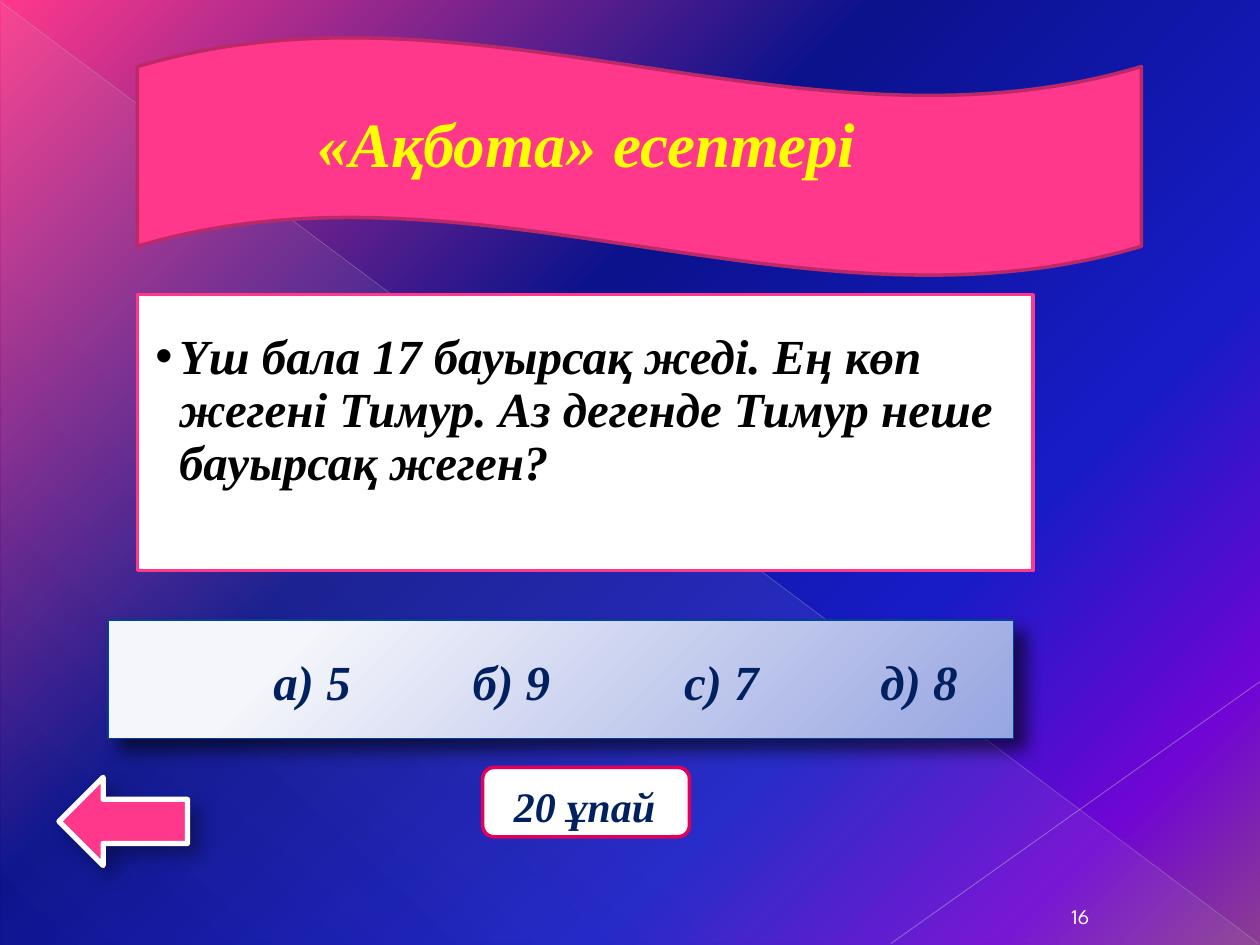
from lxml.etree import SubElement
from pptx import Presentation
from pptx.dml.color import RGBColor
from pptx.enum.shapes import MSO_CONNECTOR, MSO_SHAPE
from pptx.enum.text import MSO_ANCHOR, MSO_AUTO_SIZE, PP_ALIGN
from pptx.oxml.ns import qn
from pptx.util import Cm, Pt

# Content
TITLE = "«Ақбота» есептері"
QUESTION = ("Үш бала 17 бауырсақ жеді. Ең көп жегені Тимур. "
            "Аз дегенде Тимур неше бауырсақ жеген?")
ANSWERS = ["а) 5", "б) 9", "с) 7", "д) 8"]
POINTS = "20 ұпай"
PAGE_NUMBER = "16"

# Colours, fonts and type sizes
THEME = {
    "pink": "FF388C", "pink_edge": "BD2968", "badge_edge": "E40059",
    "white": "FFFFFF", "black": "000000", "navy": "002060",
    "yellow": "FFFF00", "title_edge": "002675", "answer_edge": "004299",
    "font": "Times New Roman", "number_font": "League Spartan",
    "title": 36, "body": 28, "points": 24, "number": 12,
    # Gradient stops: position, colour, opacity (percent)
    "background": [(0, "FF388C", 100), (40, "0A128C", 100), (70, "181CC7", 100),
                   (88, "7005D4", 100), (100, "8C3D91", 100)],
    "veil": [(0, "D2D2D2", 10), (70, "D2D2D2", 8), (100, "D2D2D2", 1)],
    "answers": [(20, "F5F6FB", 100), (100, "97A5E1", 100)],
}

# Places in cm: left, top, width, height
PLACES = {
    "veil": (0.03, 0.05, 25.37, 19),
    "badge": (9.73, 15.47, 4.17, 1.4),
    "number": (21.08, 18, 1.4, 0.84),
    "question": (2.77, 5.94, 18.06, 5.56),
    "banner": (2.77, 0.74, 20.24, 4.83),
    "title": (4.78, 1.98, 14.1, 2.39),
    "answers": (2.18, 12.5, 18.26, 2.39),
    "points": (10.11, 15.6, 4.37, 1.27),
    "arrow": (1.19, 15.67, 2.59, 1.78),
}
ANSWER_TABS = [2.97, 6.99, 11.25, 15.21]
# Start x, y, end x, y, colour, width, opacity
RAYS = [(0, 0.03, 25.37, 19.02, "BFBFBF", 0.39, 35),
        (25.4, 13.74, 17.96, 19.02, "C6C6C6", 0.47, 45)]
PANEL_MARGINS = {"margin_left": Cm(0.36), "margin_top": Cm(0.76),
                 "margin_right": Cm(0.36), "margin_bottom": Cm(0.36)}


def rgb(name):
    return RGBColor.from_string(THEME.get(name, name))


def add_color(parent, color, opacity=100):
    node = SubElement(parent, qn("a:srgbClr"), val=color)
    if opacity < 100:
        SubElement(node, qn("a:alpha"), val=str(opacity * 1000))


def set_gradient(owner, fill, stops, angle=None):
    """Linear gradient, or a circular one when no angle is given."""
    fill.gradient()
    gradient = owner.find(".//" + qn("a:gradFill"))
    for child in list(gradient):
        gradient.remove(child)
    stop_list = SubElement(gradient, qn("a:gsLst"))
    for position, color, opacity in stops:
        stop = SubElement(stop_list, qn("a:gs"), pos=str(position * 1000))
        add_color(stop, color, opacity)
    if angle is not None:
        SubElement(gradient, qn("a:lin"), ang=str(angle * 60000), scaled="0")
    else:
        circle = SubElement(gradient, qn("a:path"), {"path": "circle"})
        SubElement(circle, qn("a:fillToRect"),
                   l="-15000", t="-15000", r="115000", b="115000")


def place(shape, name):
    for attribute, value in zip(("left", "top", "width", "height"), PLACES[name]):
        setattr(shape, attribute, Cm(value))


def set_line(shape, color, width):
    shape.line.color.rgb = rgb(color)
    shape.line.width = Pt(width)


def add_panel(slide, kind, name, fill=None, line=None, shadow=0):
    shape = slide.shapes.add_shape(kind, *map(Cm, PLACES[name]))
    shape.shadow.inherit = False
    if fill:
        shape.fill.solid()
        shape.fill.fore_color.rgb = rgb(fill)
    if line:
        set_line(shape, *line)
    else:
        shape.line.fill.background()
    if shadow:
        effects = shape._element.spPr.find(qn("a:effectLst"))
        outer = SubElement(effects, qn("a:outerShdw"), blurRad=str(Pt(10.2)),
                           dist=str(Pt(8)), dir="2700000", rotWithShape="0")
        add_color(outer, THEME["black"], shadow)
    return shape


def write(shape, text, size, color, font="font", strong=True,
          frame_format=None, paragraph_format=None):
    frame = shape.text_frame
    frame_values = {"word_wrap": True, "auto_size": MSO_AUTO_SIZE.NONE,
                    "vertical_anchor": MSO_ANCHOR.TOP, **(frame_format or {})}
    for attribute, value in frame_values.items():
        setattr(frame, attribute, value)
    paragraph = frame.paragraphs[0]
    paragraph_values = {"alignment": PP_ALIGN.LEFT, "space_before": Pt(0),
                        **(paragraph_format or {})}
    for attribute, value in paragraph_values.items():
        setattr(paragraph, attribute, value)
    run = paragraph.add_run()
    run.text = text
    run_values = {"name": THEME[font], "size": Pt(THEME[size]),
                  "bold": strong, "italic": strong}
    for attribute, value in run_values.items():
        setattr(run.font, attribute, value)
    run.font.color.rgb = rgb(color)
    return paragraph


def add_label(slide, name, *args, **formats):
    write(slide.shapes.add_textbox(*map(Cm, PLACES[name])), *args, **formats)


def build():
    presentation = Presentation()
    presentation.slide_width, presentation.slide_height = Cm(25.4), Cm(19.05)
    slide = presentation.slides.add_slide(presentation.slide_layouts[1])
    tree = slide.shapes._spTree
    title, question = slide.shapes.title, slide.placeholders[1]

    # Background with a pale triangle and two rays
    set_gradient(slide.element, slide.background.fill, THEME["background"], 45)
    veil = add_panel(slide, MSO_SHAPE.RIGHT_TRIANGLE, "veil")
    set_gradient(veil._element, veil.fill, THEME["veil"], 133)
    for x1, y1, x2, y2, color, width, opacity in RAYS:
        ray = slide.shapes.add_connector(MSO_CONNECTOR.STRAIGHT,
                                         *map(Cm, (x1, y1, x2, y2)))
        set_line(ray, color, width)
        SubElement(ray._element.find(".//" + qn("a:srgbClr")), qn("a:alpha"),
                   val=str(opacity * 1000))
        SubElement(ray._element.spPr, qn("a:effectLst"))

    # Question
    tree.append(question._element)
    place(question, "question")
    question.fill.solid()
    question.fill.fore_color.rgb = rgb("white")
    set_line(question, "pink", 2)
    paragraph = write(question, QUESTION, "body", "black",
                      frame_format=PANEL_MARGINS,
                      paragraph_format={"line_spacing": 0.9})
    properties = paragraph._p.get_or_add_pPr()
    properties.set("marL", str(Cm(0.48)))
    properties.set("indent", str(Cm(-0.48)))
    SubElement(properties, qn("a:buChar"), char="•")

    # Banner and title
    add_panel(slide, MSO_SHAPE.WAVE, "banner", "pink", ("pink_edge", 2))
    tree.append(title._element)
    place(title, "title")
    paragraph = write(title, TITLE, "title", "yellow",
                      paragraph_format={"alignment": PP_ALIGN.CENTER})
    run_properties = paragraph.runs[0]._r.get_or_add_rPr()
    outline = SubElement(run_properties, qn("a:ln"), w=str(Pt(2.48)))
    add_color(SubElement(outline, qn("a:solidFill")), THEME["title_edge"])
    run_properties.insert(0, outline)

    # Answers, one tab stop each
    answers = add_panel(slide, MSO_SHAPE.RECTANGLE, "answers",
                        line=("answer_edge", 0.75), shadow=58)
    set_gradient(answers._element, answers.fill, THEME["answers"])
    paragraph = write(answers, "".join("\t" + answer for answer in ANSWERS),
                      "body", "navy", frame_format=PANEL_MARGINS,
                      paragraph_format={"line_spacing": 0.9})
    tabs = SubElement(paragraph._p.get_or_add_pPr(), qn("a:tabLst"))
    for position in ANSWER_TABS:
        SubElement(tabs, qn("a:tab"), pos=str(Cm(position)), algn="l")

    # Points badge, back arrow and page number
    add_panel(slide, MSO_SHAPE.ROUNDED_RECTANGLE, "badge", "white", ("badge_edge", 2))
    add_label(slide, "points", POINTS, "points", "navy")
    add_panel(slide, MSO_SHAPE.LEFT_ARROW, "arrow", "pink", ("white", 3), shadow=35)
    add_label(slide, "number", PAGE_NUMBER, "number", "white", font="number_font",
              strong=False, frame_format={"vertical_anchor": MSO_ANCHOR.BOTTOM},
              paragraph_format={"alignment": PP_ALIGN.CENTER})
    presentation.save("out.pptx")


if __name__ == "__main__":
    build()
